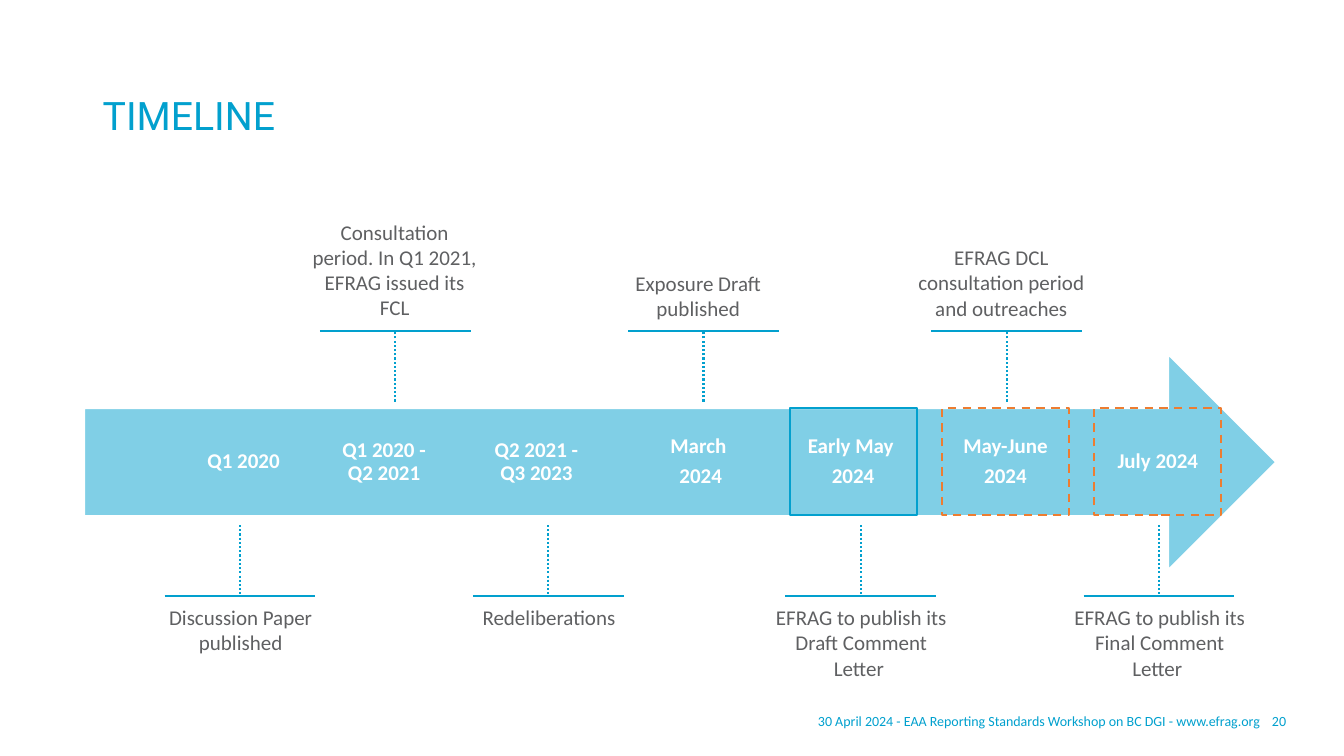
from pptx import Presentation
from pptx.dml.color import RGBColor
from pptx.enum import dml, shapes, text
from pptx.oxml.ns import qn
from pptx.util import Cm, Pt
from lxml import etree

# Content
TITLE = "TIMELINE"
FOOTER = "30 April 2024 - EAA Reporting Standards Workshop on BC DGI - www.efrag.org"
PAGE = "20"

# Date lines and frame style on the arrow
PERIODS = [
    (["Q1 2020"], None),
    (["Q1 2020 -", "Q2 2021"], None),
    (["Q2 2021 -", "Q3 2023"], None),
    (["March ", "2024"], None),
    (["Early May ", "2024"], "solid"),
    (["May-June", "2024"], "dashed"),
    (["July 2024"], "dashed"),
]

# Stem x (cm), offset of the text box from the stem, number of text lines, wording;
# callouts alternate below and above the arrow
CALLOUTS = [
    (6.05, 2.41, 2, "Discussion Paper published"),
    (9.96, 2.44, 4, "Consultation period. In Q1 2021, EFRAG issued its FCL"),
    (13.82, 2.41, 1, "Redeliberations"),
    (17.73, 2.56, 2, "Exposure Draft published"),
    (21.69, 2.41, 3, "EFRAG to publish its Draft Comment Letter "),
    (25.37, 2.56, 3, "EFRAG DCL consultation period and outreaches"),
    (29.21, 2.41, 3, "EFRAG to publish its Final Comment Letter "),
]

THEME = {
    "accent": "02A0CE", "footer": "00A0CE", "arrow": "80CFE6", "white": "FFFFFF",
    "orange": "ED7D31", "body": "5F6062",
    "title_size": 28, "body_size": 15, "footer_size": 10,
    "title_font": "Roboto", "font": "Calibri", "line": 1.5,
}

# Layout, in cm
CELL_X, CELL_Y, CELL_W, CELL_H, CELL_STEP = 4.54, 10.29, 3.2, 2.7, 3.84
STEM, HALF_BAR, NOTE_W = 1.78, 1.9, 4.85
ABOVE_Y, BELOW_Y = 10.12, 13.23  # stem ends nearest the arrow
RANGE_SHIFT = 0.6  # pulls the first line of a date range to the left

prs = Presentation()
prs.slide_width, prs.slide_height = Cm(33.87), Cm(19.05)
s = prs.slides.add_slide(prs.slide_layouts[6])


def rgb(name):
    return RGBColor.from_string(THEME[name])


def add_text(box, lines, color, size="body_size", font="font", bold=False,
             align="CENTER", anchor="TOP", insets=(0.25, 0.13), fmt=None):
    sp = s.shapes.add_textbox(*map(Cm, box))
    tf = sp.text_frame
    frame = {"word_wrap": True, "vertical_anchor": text.MSO_ANCHOR[anchor],
             "margin_left": Cm(insets[0]), "margin_right": Cm(insets[0]),
             "margin_top": Cm(insets[1]), "margin_bottom": Cm(insets[1])}
    for key, value in frame.items():
        setattr(tf, key, value)
    for i, line in enumerate(lines):
        p = tf.paragraphs[0] if i == 0 else tf.add_paragraph()
        for key, value in {"alignment": text.PP_ALIGN[align], **(fmt or {})}.items():
            setattr(p, key, value)
        r = p.add_run()
        r.text = line
        for key, value in {"size": Pt(THEME[size]), "name": THEME[font], "bold": bold}.items():
            setattr(r.font, key, value)
        r.font.color.rgb = rgb(color)
    return tf


def add_line(x1, y1, x2, y2, dash=None):
    c = s.shapes.add_connector(shapes.MSO_CONNECTOR.STRAIGHT, Cm(x1), Cm(y1), Cm(x2), Cm(y2))
    c.line.color.rgb = rgb("accent")
    c.line.width = Pt(THEME["line"])
    if dash:
        c.line.dash_style = dash
    etree.SubElement(c._element.spPr, qn("a:effectLst"))


def add_box(kind, box, line, width, fill=None, dash=None):
    sp = s.shapes.add_shape(kind, *map(Cm, box))
    sp.shadow.inherit = False
    if fill:
        sp.fill.solid()
        sp.fill.fore_color.rgb = rgb(fill)
    else:
        sp.fill.background()
    sp.line.color.rgb = rgb(line)
    sp.line.width = Pt(width)
    if dash:
        sp.line.dash_style = dash


# Title and footer
add_text((2.34, 1.14, 29.21, 3.68), [TITLE], "accent", "title_size", "title_font",
         align="LEFT", anchor="MIDDLE", fmt={"line_spacing": 0.9})
for left, width, line in [(16.5, 15.5, FOOTER), (31.4, 1.26, PAGE)]:
    add_text((left, 17.65, width, 1.02), [line], "footer", "footer_size",
             align="RIGHT", anchor="MIDDLE")

# Arrow with its periods
add_box(shapes.MSO_SHAPE.RIGHT_ARROW, (2.13, 8.94, 30.02, 5.41), "white", 1, fill="arrow")
FRAMES = {"solid": ("accent", None), "dashed": ("orange", dml.MSO_LINE.DASH)}
for i, (lines, frame) in enumerate(PERIODS):
    box = (CELL_X + i * CELL_STEP, CELL_Y, CELL_W, CELL_H)
    if frame:
        color, dash = FRAMES[frame]
        add_box(shapes.MSO_SHAPE.RECTANGLE, box, color, THEME["line"], dash=dash)
    tf = add_text(box, lines, "white", bold=True, anchor="MIDDLE", insets=(0, 0.43),
                  fmt={"line_spacing": 0.9, "space_after": Pt(5.25)})
    if lines[0].endswith("-"):
        p = tf.paragraphs[0]
        p.space_after = Pt(0)
        p._p.get_or_add_pPr().set("marR", str(Cm(RANGE_SHIFT)))

# Callouts
for i, (x, offset, count, note) in enumerate(CALLOUTS):
    above = i % 2 == 1
    start = ABOVE_Y if above else BELOW_Y
    bar = start - STEM if above else start + STEM
    height = 0.25 + 0.645 * count
    top = bar - 0.12 - height if above else bar + 0.1
    add_line(x, start, x, bar, dml.MSO_LINE.ROUND_DOT)
    add_line(x - HALF_BAR, bar, x + HALF_BAR, bar)
    add_text((x - offset, top, NOTE_W, height), [note], "body")

prs.save("out.pptx")
